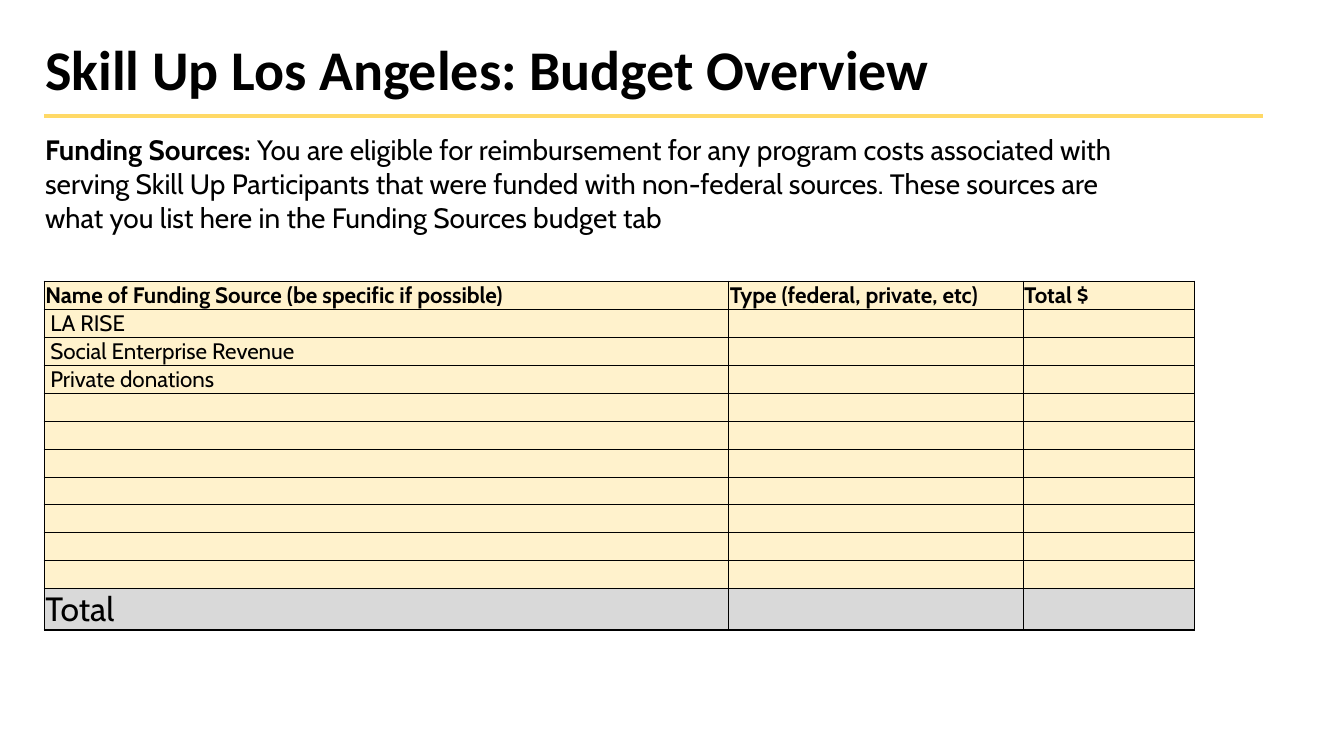
from dataclasses import dataclass

from lxml import etree
from pptx import Presentation
from pptx.dml.color import RGBColor
from pptx.enum.shapes import MSO_CONNECTOR
from pptx.enum.text import MSO_ANCHOR
from pptx.oxml.ns import qn
from pptx.util import Inches, Pt

TOP, MID, LOW = MSO_ANCHOR.TOP, MSO_ANCHOR.MIDDLE, MSO_ANCHOR.BOTTOM
STRAIGHT = MSO_CONNECTOR.STRAIGHT
WIDE, HIGH = Inches(13.33), Inches(7.5)


@dataclass(frozen=True)
class Theme:
    ink: str = "000000"
    rule: str = "FFD966"
    cream: str = "FFF2CC"
    gray: str = "D9D9D9"
    head: str = "Calibri"
    body: str = "Cabin"
    title: int = 40
    total: int = 24
    text: int = 20
    cell: int = 16


THEME = Theme()

HEADS = ["Name of Funding Source (be specific if possible)",
         "Type (federal, private, etc)", "Total $"]
FUNDS = ["LA RISE", "Social Enterprise Revenue", "Private donations"]
BLANKS = 7
COLS = [50.93, 21.9, 12.75]
ROW, LAST = 3.7, 5.47
LEFT = 3.3


# Grid of 100 columns by 100 rows
def col(n):
    return round(WIDE * n / 100)


def row(n):
    return round(HIGH * n / 100)


def write(para, text, size=THEME.text, font=THEME.body, bold=False):
    """Add one formatted run to a paragraph."""
    run = para.add_run()
    run.text = text
    run.font.size = Pt(size)
    run.font.name = font
    run.font.bold = bold
    run.font.color.rgb = RGBColor.from_string(THEME.ink)


def add_box(slide, x, y, w, h, anchor=TOP):
    """Add a wrapping text box and return its first paragraph."""
    frame = slide.shapes.add_textbox(col(x), row(y), col(w), row(h)).text_frame
    frame.word_wrap = True
    frame.vertical_anchor = anchor
    return frame.paragraphs[0]


def add_rule(slide, x, y, end):
    line = slide.shapes.add_connector(STRAIGHT, col(x), row(y), col(end), row(y))
    line.line.color.rgb = RGBColor.from_string(THEME.rule)
    line.line.width = Pt(3)
    etree.SubElement(line._element.spPr, qn("a:effectLst"))


def add_edge(cell, side, width):
    props = cell._tc.get_or_add_tcPr()
    edge = etree.SubElement(props, qn(f"a:ln{side}"), w=str(Pt(width)))
    fill = etree.SubElement(edge, qn("a:solidFill"))
    etree.SubElement(fill, qn("a:srgbClr"), val=THEME.ink)


def fill_cell(cell, text, fill, top, base, anchor=MID, indent=0.01, **form):
    """Set the borders, fill, insets and text of one cell."""
    for side, width in zip("LRTB", (1, 1, top, base)):
        add_edge(cell, side, width)
    cell.fill.solid()
    cell.fill.fore_color.rgb = RGBColor.from_string(fill)
    cell.margin_left = Inches(indent)
    cell.margin_right = cell.margin_top = Inches(0.01)
    cell.margin_bottom = 0
    cell.vertical_anchor = anchor
    para = cell.text_frame.paragraphs[0]
    if text:
        write(para, text, **form)
    else:
        size = str(form["size"] * 100)
        mark = etree.SubElement(para._p, qn("a:endParaRPr"), sz=size)
        etree.SubElement(mark, qn("a:latin"), typeface=THEME.body)


def add_grid(slide, x, y):
    names = FUNDS + [""] * BLANKS
    data = [HEADS] + [[name, "", ""] for name in names] + [["Total", "", ""]]
    end = len(data) - 1
    highs = [ROW] * end + [LAST]
    table = slide.shapes.add_table(len(data), len(COLS), col(x), row(y),
                                   col(sum(COLS)), row(sum(highs))).table
    table.first_row = table.horz_banding = False
    for part, wide in zip(table.columns, COLS):
        part.width = col(wide)
    for i, (line, high) in enumerate(zip(data, highs)):
        table.rows[i].height = row(high)
        if i == 0:
            look = dict(fill=THEME.cream, top=1, base=0.5,
                        size=THEME.cell, bold=True)
        elif i == end:
            look = dict(fill=THEME.gray, top=0.5, base=1, size=THEME.total)
        else:
            look = dict(fill=THEME.cream, top=0.5, base=0.5, anchor=LOW,
                        indent=0.06, size=THEME.cell)
        for j, text in enumerate(line):
            fill_cell(table.cell(i, j), text, **look)


def main():
    deck = Presentation()
    deck.slide_width, deck.slide_height = WIDE, HIGH
    slide = deck.slides.add_slide(deck.slide_layouts[6])

    # Title and rule
    title = add_box(slide, 2.62, 3.2, 86.25, 12.8, MID)
    title.line_spacing = 0.9
    write(title, "Skill Up Los Angeles: Budget Overview",
          size=THEME.title, font=THEME.head, bold=True)
    add_rule(slide, LEFT, 15.33, 94)

    # Funding table
    add_grid(slide, LEFT, 37.2)

    # Introduction
    intro = add_box(slide, 2.62, 16.93, 81.6, 14.8)
    write(intro, "Funding Sources: ", bold=True)
    write(intro, "You are eligible for reimbursement for any program costs "
          "associated with serving Skill Up Participants that were funded "
          "with non-federal sources. These sources are what you list here "
          "in the Funding Sources budget tab")

    deck.save("out.pptx")


if __name__ == "__main__":
    main()
